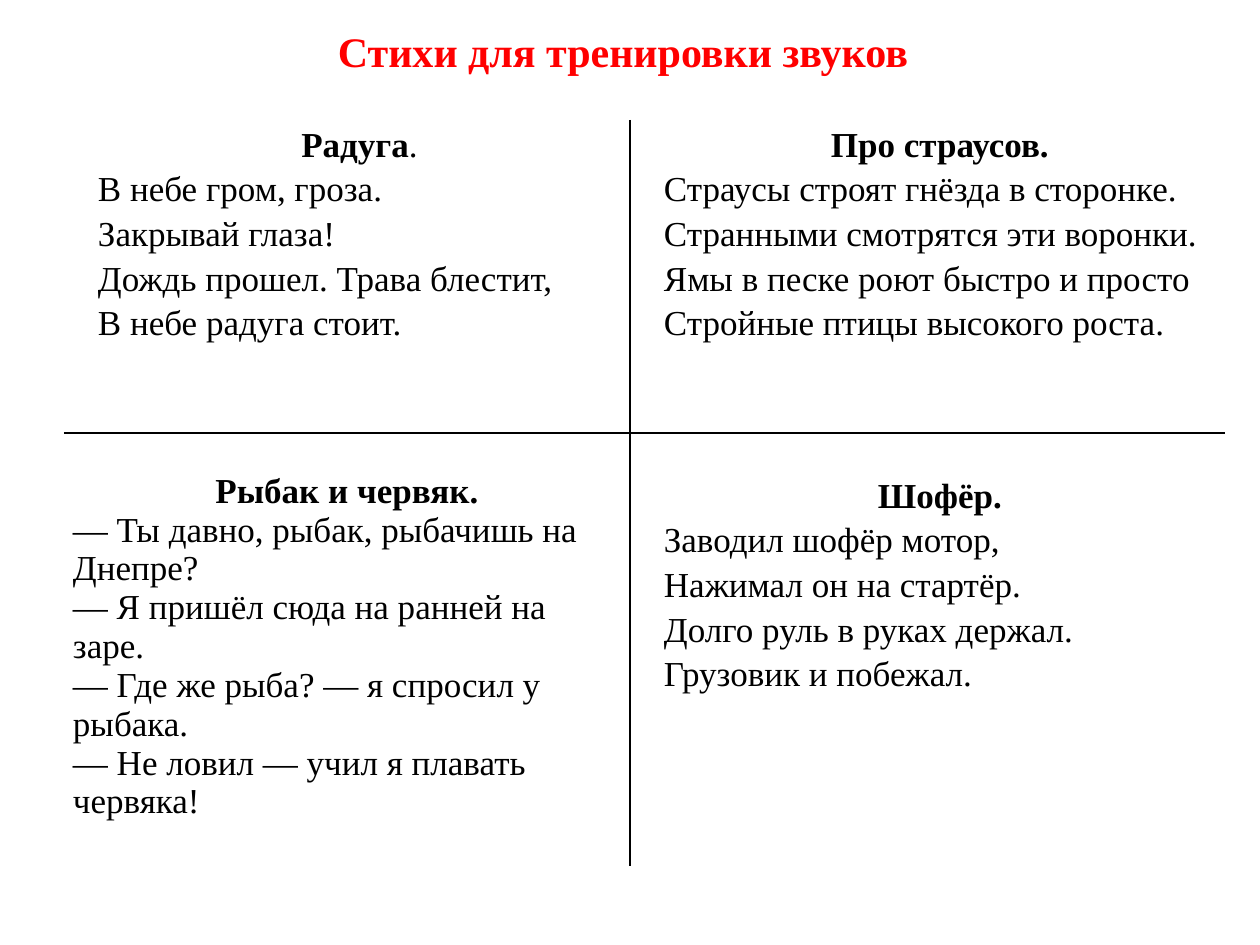
import pptx
import pptx.dml.color
import pptx.enum.text
import pptx.oxml.ns
import pptx.util
from lxml import etree

PX_PER_INCH = 126
FONT = "Times New Roman"
BLACK = "000000"
RED = "FF0000"
COLUMN_WIDTHS = (566, 595)
ROW_HEIGHTS = (313, 433)
SIDE_MARGIN = 9
INDENT = 25

POEMS = (
    (
        dict(title="Радуга", mark=".", indent=INDENT, spacing=1.15, lines=(
            "В небе гром, гроза.",
            "Закрывай глаза!",
            "Дождь прошел. Трава блестит,",
            "В небе радуга стоит.",
        )),
        dict(title="Про страусов.", indent=INDENT, spacing=1.15, lines=(
            "Страусы строят гнёзда в сторонке.",
            "Странными смотрятся эти воронки.",
            "Ямы в песке роют быстро и просто",
            "Стройные птицы высокого роста.",
        )),
    ),
    (
        dict(title="Рыбак и червяк.", top=39, lines=(
            "— Ты давно, рыбак, рыбачишь на Днепре?",
            "— Я пришёл сюда на ранней на заре.",
            "— Где же рыба? — я спросил у рыбака.",
            "— Не ловил — учил я плавать червяка!",
        )),
        dict(title="Шофёр.", top=38, indent=INDENT, spacing=1.15, lines=(
            "Заводил шофёр мотор,",
            "Нажимал он на стартёр.",
            "Долго руль в руках держал.",
            "Грузовик и побежал.",
        )),
    ),
)


def px(length):
    return pptx.util.Emu(round(length * 914400 / PX_PER_INCH))


def color(value):
    return pptx.dml.color.RGBColor.from_string(value)


def add_text(para, text, size=20, bold=False, fill=BLACK, centered=False, spacing=None):
    align = pptx.enum.text.PP_ALIGN
    para.alignment = align.CENTER if centered else align.LEFT
    para.line_spacing = spacing
    span = para.add_run()
    span.text = text
    span.font.name = FONT
    span.font.size = pptx.util.Pt(size)
    span.font.bold = bold
    span.font.color.rgb = color(fill)


def set_borders(cell, visible):
    properties = cell._tc.get_or_add_tcPr()
    qn = pptx.oxml.ns.qn
    for side in "LRTB":
        line = etree.SubElement(properties, qn(f"a:ln{side}"), w=str(pptx.util.Pt(1)))
        if side in visible:
            fill = etree.SubElement(line, qn("a:solidFill"))
            etree.SubElement(fill, qn("a:srgbClr"), val=BLACK)
        else:
            etree.SubElement(line, qn("a:noFill"))


def fill_cell(cell, title, lines, mark="", top=0, indent=0, spacing=None):
    cell.margin_left = px(SIDE_MARGIN + indent)
    cell.margin_right = px(SIDE_MARGIN)
    cell.margin_top = px(top)
    cell.margin_bottom = 0
    heading = cell.text_frame.paragraphs[0]
    add_text(heading, title, bold=True, centered=True, spacing=spacing)
    if mark:
        add_text(heading, mark, centered=True, spacing=spacing)
    for line in lines:
        add_text(cell.text_frame.add_paragraph(), line, spacing=spacing)


def add_poem_table(page):
    frame = page.shapes.add_table(
        len(ROW_HEIGHTS), len(COLUMN_WIDTHS), px(64), px(120),
        px(sum(COLUMN_WIDTHS)), px(sum(ROW_HEIGHTS)))
    table = frame.table
    table.first_row = False
    table.horz_banding = False
    for column, width in zip(table.columns, COLUMN_WIDTHS):
        column.width = px(width)
    for row, height in zip(table.rows, ROW_HEIGHTS):
        row.height = px(height)
    for row_index, poems in enumerate(POEMS):
        for column_index, poem in enumerate(poems):
            cell = table.cell(row_index, column_index)
            fill_cell(cell, **poem)
            set_borders(cell, "RL"[column_index] + "BT"[row_index])
            cell.fill.background()


def add_title(page):
    box = page.shapes.add_textbox(px(266), px(19), px(714), px(63))
    box.text_frame.word_wrap = True
    box.text_frame.auto_size = pptx.enum.text.MSO_AUTO_SIZE.SHAPE_TO_FIT_TEXT
    add_text(box.text_frame.paragraphs[0], "Стихи для тренировки звуков",
             size=24, bold=True, fill=RED, centered=True)


def main():
    deck = pptx.Presentation()
    deck.slide_width = px(1260)
    deck.slide_height = px(945)
    page = deck.slides.add_slide(deck.slide_layouts[6])
    add_poem_table(page)
    add_title(page)
    deck.save("out.pptx")


if __name__ == "__main__":
    main()
